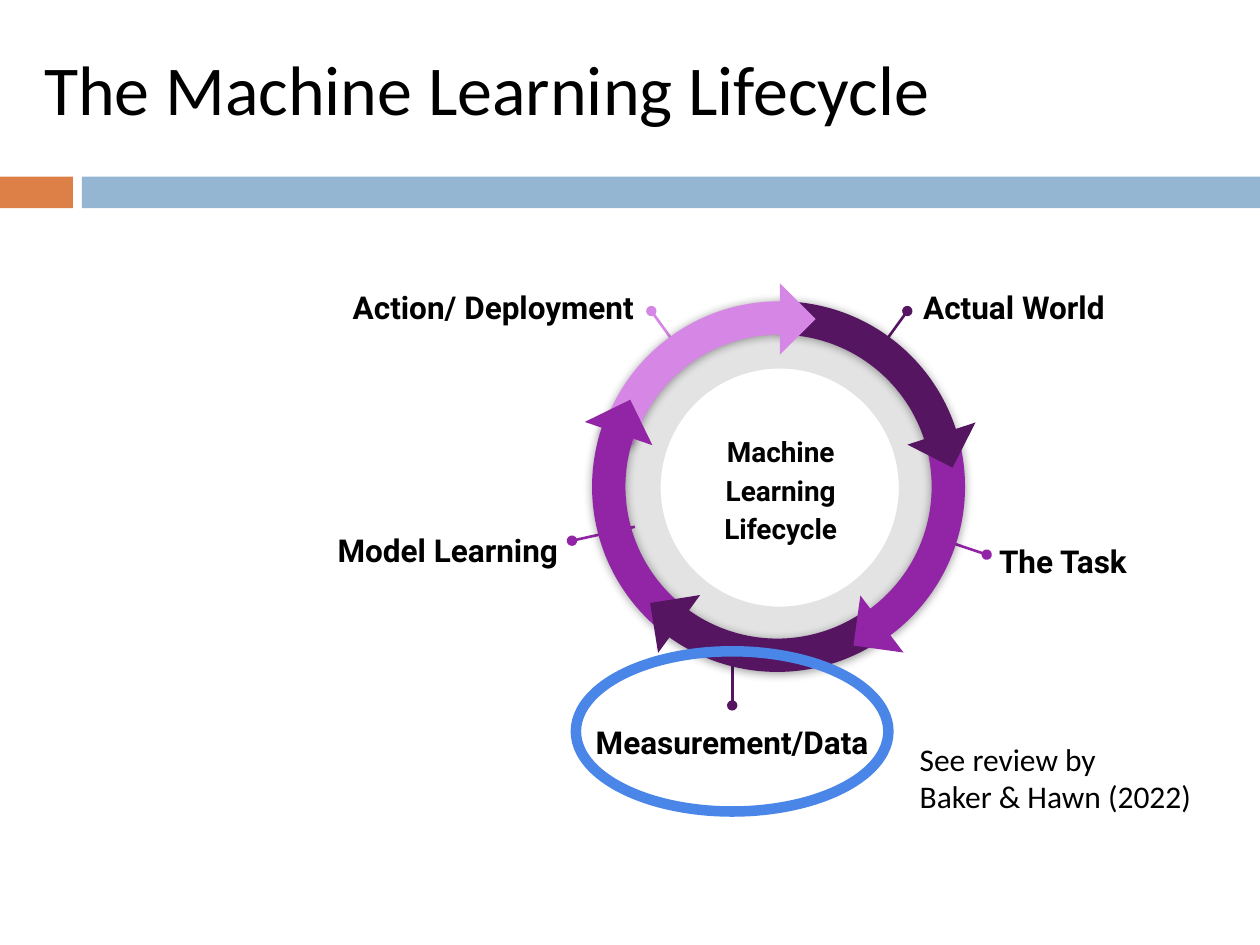
from lxml import etree
from pptx import Presentation
from pptx.dml.color import RGBColor
from pptx.enum.shapes import MSO_CONNECTOR, MSO_SHAPE
from pptx.enum.text import MSO_ANCHOR, PP_ALIGN
from pptx.oxml.ns import qn
from pptx.util import Cm, Pt

LEFT, CENTER, RIGHT = PP_ALIGN.LEFT, PP_ALIGN.CENTER, PP_ALIGN.RIGHT
TOP, MIDDLE = MSO_ANCHOR.TOP, MSO_ANCHOR.MIDDLE
RECTANGLE, OVAL, DONUT = MSO_SHAPE.RECTANGLE, MSO_SHAPE.OVAL, MSO_SHAPE.DONUT
BLOCK_ARC, TRIANGLE = MSO_SHAPE.BLOCK_ARC, MSO_SHAPE.RIGHT_TRIANGLE
STRAIGHT = MSO_CONNECTOR.STRAIGHT

COLORS = {
    "orange": "DD8047", "bar": "94B6D2", "black": "000000", "hub": "020202",
    "dark": "551561", "purple": "9225A5", "pink": "D686E4", "highlight": "4A86E8",
}

# Boxes are left, top, width, height in centimetres.
BARS = [((0, 3.56, 1.47, 0.64), "orange"), ((1.65, 3.56, 23.75, 0.64), "bar")]
TITLE = ("The Machine Learning Lifecycle", (0.64, 0.66, 23.67, 1.6))
HUB = ("Machine Learning Lifecycle", (13.39, 8.71, 4.7, 2.24))
NOTE = ("See review by\vBaker & Hawn (2022)", (18.29, 14.66, 6.3, 2.06))
INNER_RING = (12.19, 6.3, 7.06, 7.06)
HIGHLIGHT = (11.61, 13.13, 6.3, 3.23)

# text, box, alignment, pointer dot, pointer end, colour
STAGES = [
    ("Actual World", (18.36, 5.44, 4.83, 1.14), LEFT, (18.29, 6.27), (17.53, 7.32), "dark"),
    ("Action/ Deployment", (5.97, 5.44, 7.06, 1.35), RIGHT, (13.13, 6.27), (13.89, 7.32), "pink"),
    ("The Task", (19.89, 10.57, 4.17, 1.14), LEFT, (19.89, 11.18), (18.67, 10.77), "purple"),
    ("Model Learning", (6.5, 10.34, 5, 1.35), RIGHT, (11.53, 10.9), (12.8, 10.62), "purple"),
    ("Measurement/Data", (11.23, 14.22, 7.06, 1.85), CENTER, (14.76, 14.22), (14.76, 12.85), "dark"),
]

ARC_SIZE, ARC_CENTER_Y = 7.47, 9.81
# centre x, rotation, mirrored, adjustments, colour
ARCS = [
    (15.72, 30, False, (144.14, 189.99, 0.09), "dark"),
    (15.72, 210, True, (201.79, 26.24, 0.09), "purple"),
    (15.71, 330, True, (143.34, 188.55, 0.09), "pink"),
    (15.67, 150, False, (201.85, 30.07, 0.09), "purple"),
    (15.67, 210, True, (157.39, 200.08, 0.09), "dark"),
]

ARROWHEAD_SIZE = 1.02
# left, top, rotation, colour
ARROWHEADS = [
    (18.47, 8.23, 297, "dark"), (11.96, 8.23, 154, "purple"),
    (17.27, 12.07, 7.9, "purple"), (13.18, 12.07, 81, "dark"),
    (15.21, 5.92, 225, "pink"),
]


def rgb(name):
    return RGBColor.from_string(COLORS[name])


def add_figure(slide, kind, box, color=None, rotation=0, adjustments=()):
    shape = slide.shapes.add_shape(kind, *map(Cm, box))
    shape.shadow.inherit = False
    shape.line.fill.background()
    if color:
        shape.fill.solid()
        shape.fill.fore_color.rgb = rgb(color)
    else:
        shape.fill.background()
    shape.rotation = rotation
    for index, value in enumerate(adjustments):
        shape.adjustments[index] = value
    return shape


def set_alpha(color_element, percent):
    etree.SubElement(color_element, qn("a:alpha"), val=str(percent * 1000))


def add_soft_shadow(shape):
    effects = shape._element.spPr.find(qn("a:effectLst"))
    shadow = etree.SubElement(effects, qn("a:outerShdw"), blurRad=str(Pt(5.6)),
                              dist=str(Pt(0.8)), dir="5400000", rotWithShape="0")
    color = etree.SubElement(shadow, qn("a:srgbClr"), val=COLORS["black"])
    set_alpha(color, 40)


def add_text(slide, text, box, size, font="Calibri", color="black", bold=False,
             align=LEFT, anchor=TOP, spacing=1.0):
    frame = slide.shapes.add_textbox(*map(Cm, box)).text_frame
    frame.word_wrap = True
    frame.vertical_anchor = anchor
    frame.margin_left = frame.margin_right = Cm(0.25)
    frame.margin_top = frame.margin_bottom = Cm(0.25)
    frame.text = text
    paragraph = frame.paragraphs[0]
    paragraph.alignment = align
    paragraph.line_spacing = spacing
    for run in paragraph.runs:
        run.font.name = font
        run.font.size = Pt(size)
        run.font.bold = bold
        run.font.color.rgb = rgb(color)


def add_pointer(slide, dot, end, color):
    connector = slide.shapes.add_connector(STRAIGHT, *map(Cm, dot + end))
    connector.line.color.rgb = rgb(color)
    connector.line.width = Pt(1.5)
    etree.SubElement(connector.line._get_or_add_ln(), qn("a:headEnd"), type="oval")
    etree.SubElement(connector._element.spPr, qn("a:effectLst"))


def add_wheel(slide):
    for center_x, rotation, mirrored, adjustments, color in ARCS:
        box = (center_x - ARC_SIZE / 2, ARC_CENTER_Y - ARC_SIZE / 2, ARC_SIZE, ARC_SIZE)
        arc = add_figure(slide, BLOCK_ARC, box, color, rotation, adjustments)
        if mirrored:
            arc._element.spPr.find(qn("a:xfrm")).set("flipH", "1")
        add_soft_shadow(arc)
    for left, top, rotation, color in ARROWHEADS:
        box = (left, top, ARROWHEAD_SIZE, ARROWHEAD_SIZE)
        add_figure(slide, TRIANGLE, box, color, rotation)


def main():
    presentation = Presentation()
    presentation.slide_width, presentation.slide_height = Cm(25.4), Cm(19.05)
    slide = presentation.slides.add_slide(presentation.slide_layouts[6])

    for box, color in BARS:
        add_figure(slide, RECTANGLE, box, color)
    ring = add_figure(slide, DONUT, INNER_RING, "black", adjustments=(0.16,))
    set_alpha(ring._element.spPr.find(qn("a:solidFill"))[0], 11)

    label_style = {"font": "Roboto", "bold": True, "spacing": 1.15}
    for text, box, align, dot, end, color in STAGES:
        add_pointer(slide, dot, end, color)
        add_text(slide, text, box, 18, align=align, **label_style)
    add_wheel(slide)
    add_text(slide, *HUB, 16, color="hub", align=CENTER, anchor=MIDDLE, **label_style)

    highlight = add_figure(slide, OVAL, HIGHLIGHT)
    highlight.line.color.rgb = rgb("highlight")
    highlight.line.width = Pt(6)
    add_text(slide, *NOTE, 18)
    add_text(slide, *TITLE, 40)
    presentation.save("out.pptx")


if __name__ == "__main__":
    main()
